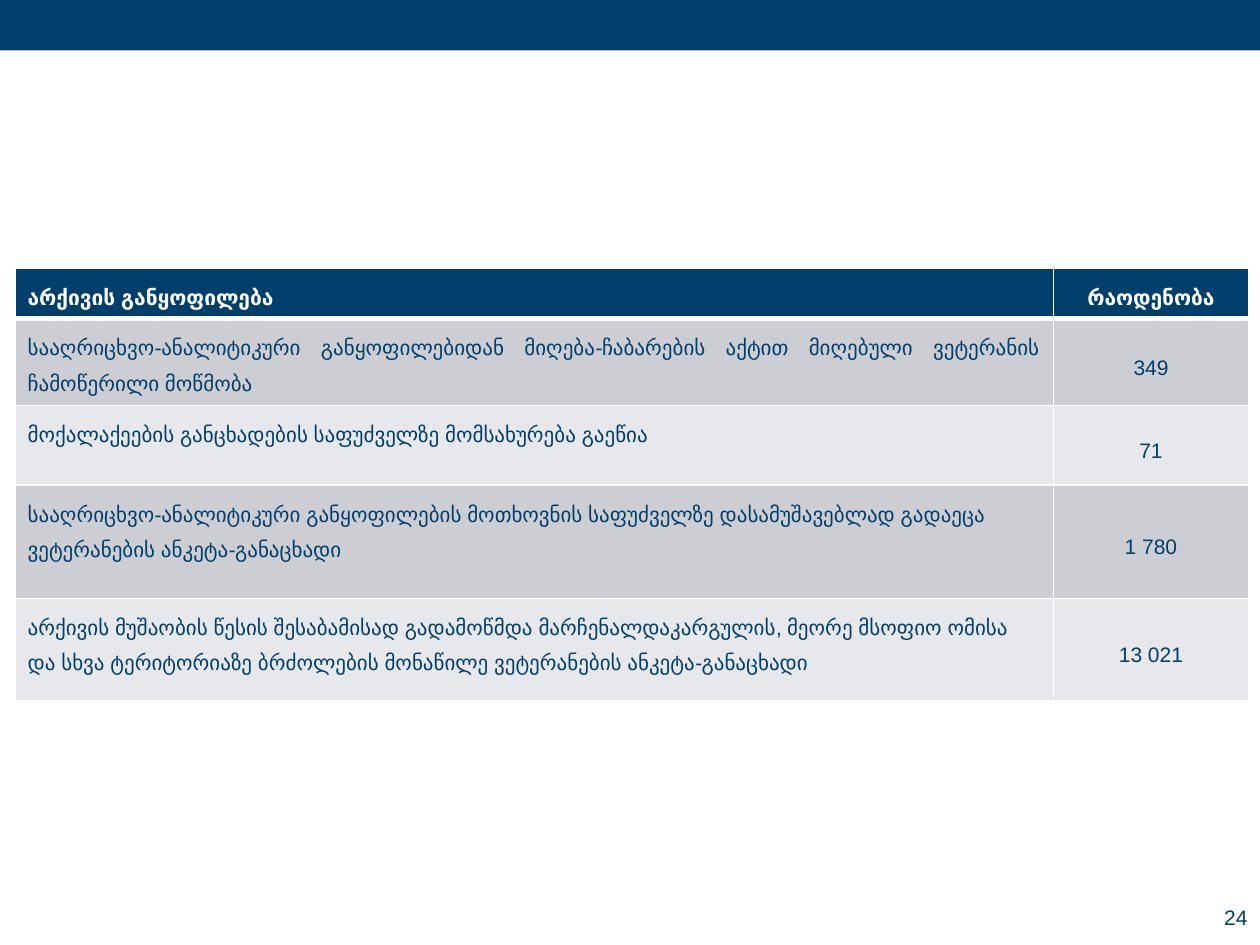
from typing import NamedTuple

from lxml.etree import SubElement
from pptx import Presentation
from pptx.dml.color import RGBColor
from pptx.enum.shapes import MSO_SHAPE
from pptx.enum.text import MSO_ANCHOR, PP_ALIGN
from pptx.oxml.ns import qn
from pptx.util import Inches, Pt

NAVY, WHITE, GREY, PALE = "003E6C", "FFFFFF", "CCCED4", "E7E8EB"
COLUMNS = (8.24, 1.55)


class Row(NamedTuple):
    label: str
    count: str
    height: float
    align: PP_ALIGN = PP_ALIGN.LEFT


ROWS = (
    Row("არქივის განყოფილება", "რაოდენობა", 0.4),
    Row("სააღრიცხვო-ანალიტიკური განყოფილებიდან მიღება-ჩაბარების აქტით "
        "მიღებული ვეტერანის ჩამოწერილი მოწმობა", "349", 0.69, PP_ALIGN.JUSTIFY),
    Row("მოქალაქეების განცხადების საფუძველზე მომსახურება გაეწია", "71", 0.63),
    Row("სააღრიცხვო-ანალიტიკური განყოფილების მოთხოვნის საფუძველზე "
        "დასამუშავებლად გადაეცა ვეტერანების ანკეტა-განაცხადი", "1 780", 0.9),
    Row("არქივის მუშაობის წესის შესაბამისად გადამოწმდა მარჩენალდაკარგულის, "
        "მეორე მსოფიო ომისა და სხვა ტერიტორიაზე ბრძოლების მონაწილე "
        "ვეტერანების ანკეტა-განაცხადი", "13 021", 0.81),
)


def paint(color_format, color: str) -> None:
    color_format.rgb = RGBColor.from_string(color)


def fill(obj, color: str) -> None:
    obj.fill.solid()
    paint(obj.fill.fore_color, color)


def write(tf, text: str, color: str, align: PP_ALIGN, bold: bool = False) -> None:
    p = tf.paragraphs[0]
    p.text = text
    p.alignment = align
    for r in p.runs:
        r.font.name, r.font.size, r.font.bold = "Arial", Pt(12), bold
        paint(r.font.color, color)


def add_borders(cell, bottom: float) -> None:
    tc_pr = cell._tc.get_or_add_tcPr()
    # Border lines must come before the cell fill
    for i, (side, width) in enumerate((("L", 1), ("R", 1), ("T", 1), ("B", bottom))):
        ln = SubElement(tc_pr, qn(f"a:ln{side}"), w=str(Pt(width)))
        SubElement(SubElement(ln, qn("a:solidFill")), qn("a:srgbClr"), val=WHITE)
        tc_pr.insert(i, ln)


def add_archive_table(s, left: float, top: float) -> None:
    height = sum(row.height for row in ROWS)
    table = s.shapes.add_table(len(ROWS), len(COLUMNS), Inches(left), Inches(top),
                               Inches(sum(COLUMNS)), Inches(height)).table
    for column, width in zip(table.columns, COLUMNS):
        column.width = Inches(width)
    for i, row in enumerate(ROWS):
        header = i == 0
        table.rows[i].height = Inches(row.height)
        background = NAVY if header else (PALE, GREY)[i % 2]
        for j, (text, align) in enumerate(((row.label, row.align),
                                           (row.count, PP_ALIGN.CENTER))):
            cell = table.cell(i, j)
            fill(cell, background)
            add_borders(cell, 3 if header else 1)
            write(cell.text_frame, text, WHITE if header else NAVY, align, header)
            cell.text_frame.paragraphs[0].line_spacing = 1.5
            if j and not header:
                cell.vertical_anchor = MSO_ANCHOR.MIDDLE


def main() -> None:
    prs = Presentation()
    prs.slide_width, prs.slide_height = Inches(10), Inches(7.5)
    s = prs.slides.add_slide(prs.slide_layouts[6])

    # Top band
    band = s.shapes.add_shape(MSO_SHAPE.RECTANGLE, 0, 0, prs.slide_width, Inches(0.4))
    band.shadow.inherit = False
    fill(band, NAVY)
    band.line.fill.background()

    # Archive figures
    add_archive_table(s, 0.12, 2.13)

    # Page number
    sp = s.shapes.add_textbox(Inches(8.83), Inches(7.1), Inches(1.17), Inches(0.36))
    tf = sp.text_frame
    tf.word_wrap = True
    tf.vertical_anchor = MSO_ANCHOR.MIDDLE
    write(tf, "24", NAVY, PP_ALIGN.RIGHT)

    prs.save("out.pptx")


if __name__ == "__main__":
    main()
